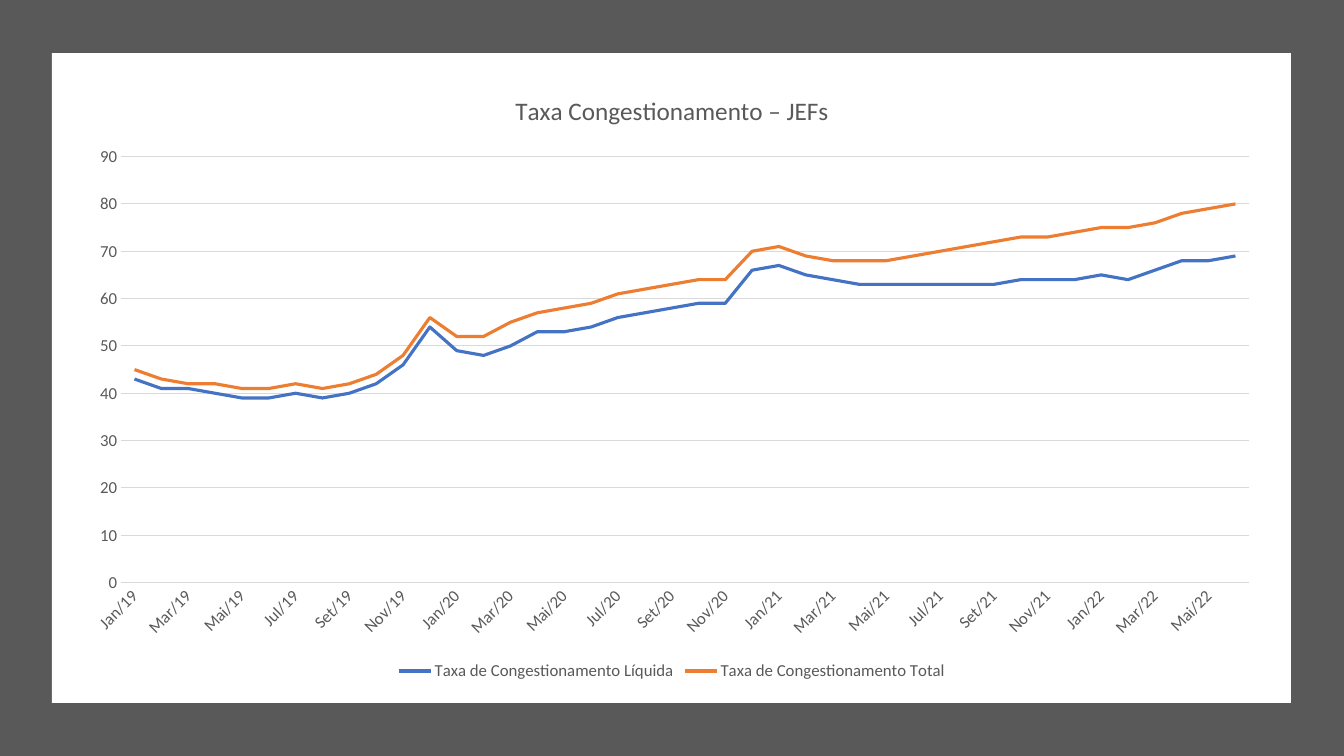
from pptx import Presentation
from pptx.chart.data import CategoryChartData
from pptx.dml.color import RGBColor
from pptx.enum.chart import XL_CHART_TYPE, XL_LEGEND_POSITION, XL_TICK_MARK
from pptx.enum.shapes import MSO_SHAPE
from pptx.util import Emu, Pt

LINE_CHART = XL_CHART_TYPE.LINE
RECTANGLE = MSO_SHAPE.RECTANGLE
BOTTOM = XL_LEGEND_POSITION.BOTTOM
NO_TICK = XL_TICK_MARK.NONE

EMU_PER_PX = 914400 / 100.8
FONT = "Calibri"
COLOURS = {"frame": "595959", "panel": "FFFFFF", "text": "595959",
           "grid": "D9D9D9", "net": "4472C4", "total": "ED7D31"}


def px(*lengths):
    return [Emu(round(length * EMU_PER_PX)) for length in lengths]


def style_font(font, size):
    font.name = FONT
    font.size = Pt(size)
    font.bold = False
    font.color.rgb = RGBColor.from_string(COLOURS["text"])


deck = Presentation()
deck.slide_width, deck.slide_height = px(1344, 756)
page = deck.slides.add_slide(deck.slide_layouts[6])

# Dark frame and white panel
for colour, bounds in (("frame", (0, 0, 1344, 756)), ("panel", (52, 53, 1239, 650))):
    box = page.shapes.add_shape(RECTANGLE, *px(*bounds))
    box.shadow.inherit = False
    box.fill.solid()
    box.fill.fore_color.rgb = RGBColor.from_string(COLOURS[colour])
    box.line.fill.background()

# Monthly rates, January 2019 to June 2022
MONTHS = "Jan Fev Mar Abr Mai Jun Jul Ago Set Out Nov Dez".split()
NET = [43, 41, 41, 40, 39, 39, 40, 39, 40, 42, 46, 54,
       49, 48, 50, 53, 53, 54, 56, 57, 58, 59, 59, 66,
       67, 65, 64, 63, 63, 63, 63, 63, 63, 64, 64, 64,
       65, 64, 66, 68, 68, 69]
TOTAL = [45, 43, 42, 42, 41, 41, 42, 41, 42, 44, 48, 56,
         52, 52, 55, 57, 58, 59, 61, 62, 63, 64, 64, 70,
         71, 69, 68, 68, 68, 69, 70, 71, 72, 73, 73, 74,
         75, 75, 76, 78, 79, 80]
rates = CategoryChartData(number_format="0")
rates.categories = [f"{MONTHS[i % 12]}/{19 + i // 12}" for i in range(len(NET))]
rates.add_series("Taxa de Congestionamento Líquida", NET)
rates.add_series("Taxa de Congestionamento Total", TOTAL)

# Line chart
chart = page.shapes.add_chart(LINE_CHART, *px(71, 71, 1202, 614), rates).chart
style_font(chart.font, 12)
for series, colour in zip(chart.plots[0].series, ("net", "total")):
    series.smooth = False
    series.format.line.width = Pt(2.25)
    series.format.line.color.rgb = RGBColor.from_string(COLOURS[colour])

# Chart title
chart.has_title = True
chart.chart_title.include_in_layout = False
para = chart.chart_title.text_frame.paragraphs[0]
span = para.add_run()
span.text = "Taxa Congestionamento – JEFs"
style_font(span.font, 18)

# Axes
months, values = chart.category_axis, chart.value_axis
for axis in (months, values):
    axis.major_tick_mark = axis.minor_tick_mark = NO_TICK
    style_font(axis.tick_labels.font, 12)
months._element.txPr.bodyPr.set("rot", "-2700000")
values.minimum_scale, values.maximum_scale, values.major_unit = 0, 90, 10
values.has_major_gridlines = True
values.format.line.fill.background()
for rule in (months.format.line, values.major_gridlines.format.line):
    rule.width = Pt(0.75)
    rule.color.rgb = RGBColor.from_string(COLOURS["grid"])

# Legend
chart.has_legend = True
chart.legend.position = BOTTOM
chart.legend.include_in_layout = False
style_font(chart.legend.font, 12)

deck.save("out.pptx")
